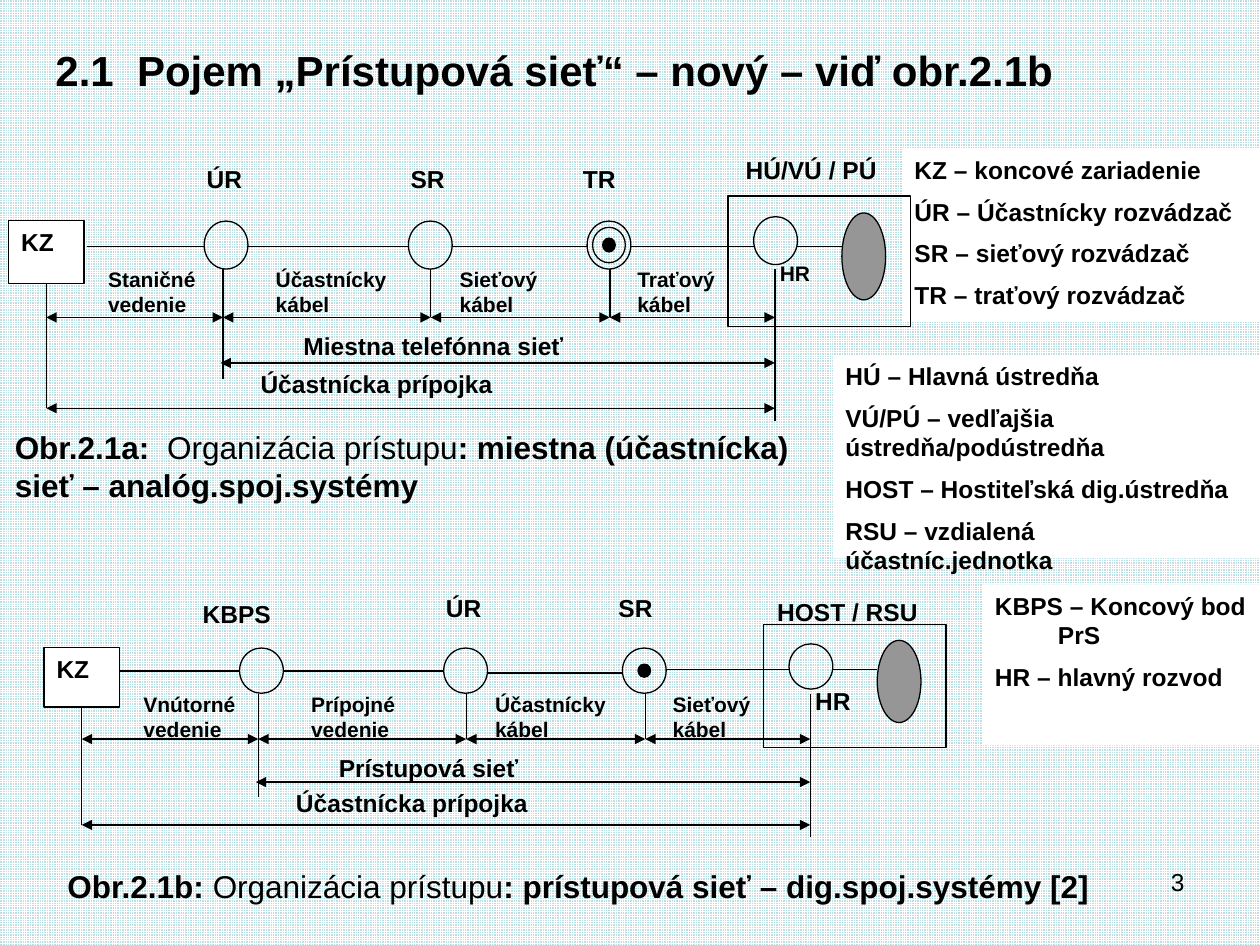
from dataclasses import dataclass
from itertools import pairwise

from lxml.etree import SubElement
from pptx import Presentation
from pptx.dml.color import RGBColor
from pptx.enum.dml import MSO_PATTERN
from pptx.enum.shapes import MSO_CONNECTOR, MSO_SHAPE
from pptx.enum.text import MSO_ANCHOR, MSO_AUTO_SIZE, PP_ALIGN
from pptx.oxml.ns import qn
from pptx.util import Pt

BLACK = RGBColor(0x00, 0x00, 0x00)
WHITE = RGBColor(0xFF, 0xFF, 0xFF)
GREY = RGBColor(0x96, 0x96, 0x96)
PALE_TEAL = RGBColor(0xBB, 0xE0, 0xE3)


@dataclass
class Sketch:
    slide: object
    font: str = "Arial"
    line_width: float = 0.75

    def background(self):
        fill = self.slide.background.fill
        fill.patterned()
        fill.pattern = MSO_PATTERN.SMALL_GRID
        fill.fore_color.rgb = WHITE
        fill.back_color.rgb = PALE_TEAL

    def set_text(self, shape, text, size, bold=True, align=PP_ALIGN.LEFT):
        """Set one paragraph per line of text, spaced by half the type size."""
        frame = shape.text_frame
        frame.text = text
        frame.word_wrap = True
        frame.auto_size = MSO_AUTO_SIZE.NONE
        frame.vertical_anchor = MSO_ANCHOR.TOP
        for paragraph in frame.paragraphs:
            paragraph.alignment = align
            paragraph.space_before = Pt(size / 2)
            for run in paragraph.runs:
                self.style(run, size, bold)

    def style(self, run, size, bold):
        run.font.name = self.font
        run.font.size = Pt(size)
        run.font.bold = bold
        run.font.color.rgb = BLACK

    def title(self, text, x, y, w, h):
        heading = self.slide.shapes.title
        heading.left, heading.top, heading.width, heading.height = map(Pt, (x, y, w, h))
        self.set_text(heading, text, 24)

    def label(self, text, x, y, w, h=36, size=14, **style):
        box = self.slide.shapes.add_textbox(*map(Pt, (x, y, w, h)))
        self.set_text(box, text, size, **style)
        return box

    def caption(self, number, topic, detail, x, y, w, h):
        """Figure caption whose middle part is not bold."""
        paragraph = self.label(number, x, y, w, h, 18).text_frame.paragraphs[0]
        for text, bold in ((topic, False), (detail, True)):
            run = paragraph.add_run()
            run.text = text
            self.style(run, 18, bold)

    def shape(self, kind, x, y, w, h, fill=None, outlined=True):
        drawn = self.slide.shapes.add_shape(kind, *map(Pt, (x, y, w, h)))
        drawn.shadow.inherit = False
        if fill is None:
            drawn.fill.background()
        else:
            drawn.fill.solid()
            drawn.fill.fore_color.rgb = fill
        if outlined:
            drawn.line.color.rgb = BLACK
            drawn.line.width = Pt(self.line_width)
        else:
            drawn.line.fill.background()
        return drawn

    def legend(self, entries, x, y, w, h):
        panel = self.shape(MSO_SHAPE.RECTANGLE, x, y, w, h, WHITE, outlined=False)
        self.set_text(panel, "\n".join(entries), 14)

    def line(self, x1, y1, x2, y2, arrows=False):
        connector = self.slide.shapes.add_connector(
            MSO_CONNECTOR.STRAIGHT, *map(Pt, (x1, y1, x2, y2)))
        connector.line.color.rgb = BLACK
        connector.line.width = Pt(self.line_width)
        properties = connector._element.spPr
        if arrows:
            outline = properties.find(qn("a:ln"))
            for end in ("a:headEnd", "a:tailEnd"):
                SubElement(outline, qn(end), type="triangle")
        SubElement(properties, qn("a:effectLst"))
        return connector


@dataclass
class Network:
    """One access chain; heights shrink by scale, widths stay the same."""
    left: float
    top: float
    scale: float
    nodes: tuple
    cables: tuple
    network_name: str
    trunk_levels: tuple
    terminal_gap: float
    hr_size: int
    ringed: bool

    def x(self, offset):
        return self.left + offset

    def y(self, offset):
        return self.top + offset * self.scale

    def draw(self, sketch):
        def oval(cx, cy, w, h, fill=None):
            sketch.shape(MSO_SHAPE.OVAL, self.x(cx - w / 2), self.y(cy - h / 2),
                         w, h * self.scale, fill)

        terminal = sketch.shape(MSO_SHAPE.RECTANGLE, self.left, self.top,
                                43, 36 * self.scale, WHITE)
        sketch.set_text(terminal, "KZ", 14)
        for name, label_x, label_y, width in self.nodes:
            sketch.label(name, label_x, label_y, width)

        node_centres = (124.2, 240.9, 343, 438.2)
        for centre, middle in zip(node_centres, (14, 14, 14, 11.5)):
            oval(centre, middle, 25, 27.4)
        if self.ringed:
            oval(343, 14, 18.7, 20.2)
        oval(343, 14, 7.2, 7.9, BLACK)
        oval(488.6, 20.5, 25, 49.7, GREY)
        sketch.shape(MSO_SHAPE.RECTANGLE, self.x(411), self.y(-14),
                     104.4, 74.4 * self.scale)
        sketch.label("HR", self.x(433.5), self.y(19.4), 43, size=self.hr_size)

        # Trunk segments run between the facing edges of neighbours.
        starts = (43 + self.terminal_gap, *(c + 12.5 for c in node_centres))
        ends = (*(c - 12.5 for c in node_centres), 476.1)
        for start, end, level in zip(starts, ends, self.trunk_levels):
            sketch.line(self.x(start), level, self.x(end), level)

        stations = [self.x(offset) for offset in (21.5, 122.4, 241.2, 343.5, 437.8)]
        cable_row, network_row, line_row = map(self.y, (55.4, 81.4, 107.3))
        drop = sketch.line(stations[0], self.y(36), stations[0], line_row)
        drop.begin_connect(terminal, 2)
        bottoms = (self.y(90.7), cable_row, cable_row, self.y(114.5))
        for station, bottom in zip(stations[1:], bottoms):
            sketch.line(station, self.y(28), station, bottom)

        spans = [(start, end, cable_row) for start, end in pairwise(stations)]
        spans += [(stations[1] - 1.4, stations[-1], network_row),
                  (stations[0], stations[-1], line_row)]
        for start, end, row in spans:
            sketch.line(start, row, end, row, arrows=True)

        for cable, offset in zip(self.cables, (49.7, 145.5, 250.6, 352.1)):
            sketch.label(cable, self.x(offset), self.y(22.8), 80, size=12)
        sketch.label(self.network_name, self.x(161.3), self.y(59.8), 264)
        sketch.label("Účastnícka prípojka", self.x(136.8), self.y(81.4), 275)


def main():
    deck = Presentation()
    deck.slide_width, deck.slide_height = Pt(720), Pt(540)
    sketch = Sketch(deck.slides.add_slide(deck.slide_layouts[5]))
    sketch.background()
    sketch.title("2.1  Pojem „Prístupová sieť“ – nový – viď obr.2.1b", 24.5, 21.6, 657, 36)
    sketch.label("3", 516, 492, 168, bold=False, align=PP_ALIGN.RIGHT)

    sketch.legend(("HÚ – Hlavná ústredňa", "VÚ/PÚ – vedľajšia ústredňa/podústredňa",
                   "HOST – Hostiteľská dig.ústredňa", "RSU – vzdialená účastníc.jednotka"),
                  476, 203, 244, 116)
    sketch.legend(("KZ – koncové zariadenie", "ÚR – Účastnícky rozvádzač",
                   "SR – sieťový rozvádzač", "TR – traťový rozvádzač"),
                  515.5, 85, 204.5, 99)
    sketch.legend(("KBPS – Koncový bod \tPrS", "HR – hlavný rozvod"),
                  561.5, 334, 158.5, 92)

    Network(
        left=5, top=126, scale=1,
        nodes=(("ÚR", 111, 90, 43), ("SR", 227.5, 90, 43),
               ("TR", 326, 90, 43), ("HÚ/VÚ / PÚ", 419, 85, 110)),
        cables=("Staničné vedenie", "Účastnícky kábel", "Sieťový kábel", "Traťový kábel"),
        network_name="Miestna telefónna sieť",
        trunk_levels=(141,) * 5, terminal_gap=1.5, hr_size=12, ringed=True,
    ).draw(sketch)
    Network(
        left=25.2, top=370, scale=0.945,
        nodes=(("KBPS", 108.7, 339, 71), ("ÚR", 247.7, 335.5, 43),
               ("SR", 346.3, 335.5, 43), ("HOST / RSU", 437, 337.7, 110)),
        cables=("Vnútorné vedenie", "Prípojné vedenie", "Účastnícky kábel", "Sieťový kábel"),
        network_name="Prístupová sieť",
        trunk_levels=(383.5, 383.5, 384.5, 382.5, 382.5),
        terminal_gap=0, hr_size=14, ringed=False,
    ).draw(sketch)

    sketch.caption("Obr.2.1a:  ", "Organizácia prístupu",
                   ": miestna (účastnícka) sieť – analóg.spoj.systémy", 1.4, 241, 490, 50)
    sketch.caption("Obr.2.1b: ", "Organizácia prístupu",
                   ": prístupová sieť – dig.spoj.systémy [2]", 31.5, 492, 620, 29)
    deck.save("out.pptx")


if __name__ == "__main__":
    main()
